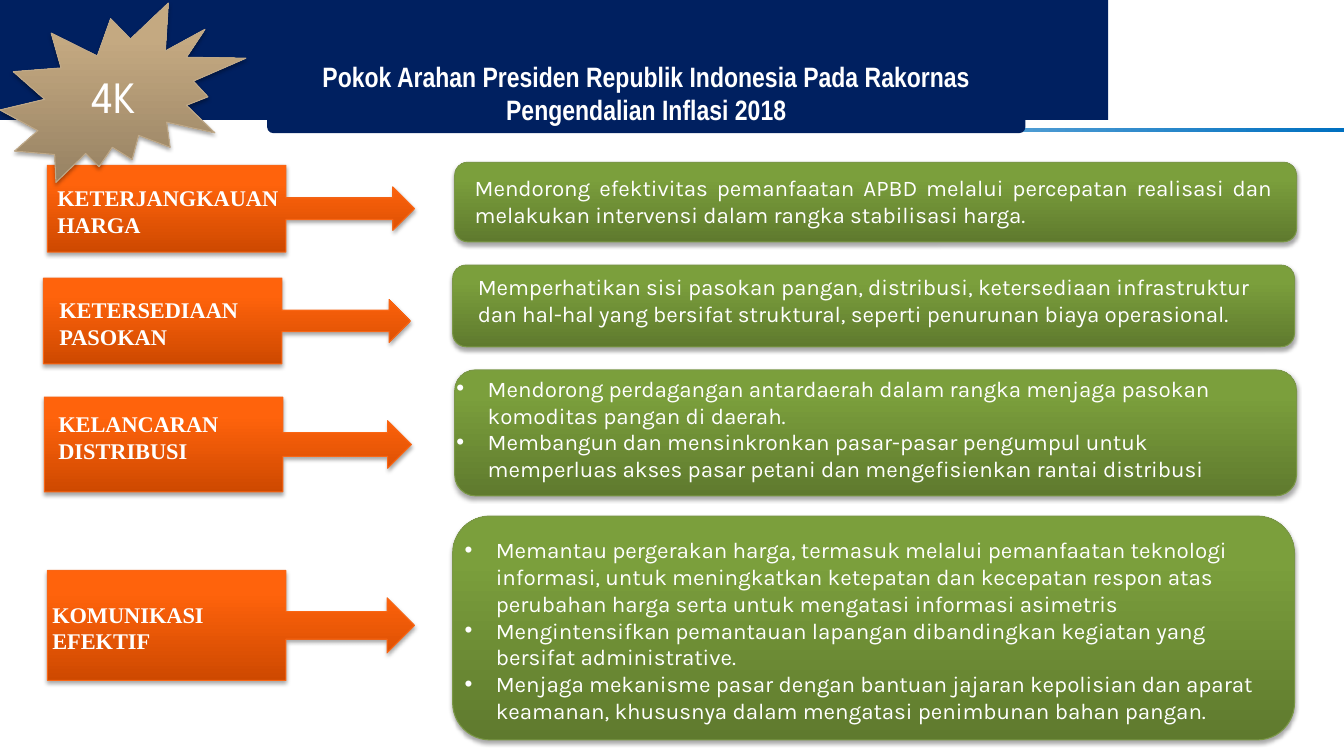
from dataclasses import dataclass

from lxml import etree
from pptx import Presentation
from pptx import util as u
from pptx.dml.color import RGBColor
from pptx.enum import shapes, text
from pptx.oxml.ns import qn

W, H = u.Inches(13.33), u.Inches(7.5)
COL, ROW = W / 100, H / 100
SHAPE, ALIGN, ANCHOR = shapes.MSO_SHAPE, text.PP_ALIGN, text.MSO_ANCHOR


@dataclass(frozen=True)
class Theme:
    navy: str = "002060"
    white: str = "FFFFFF"
    rule: tuple = ((0, "0070C0"), (78, "FFFFFF"), (100, "FFFFFF"), (100, "797B7E"))
    orange: tuple = ((0, "CE4900"), (80, "FF630C"), (100, "FF640E"))
    orange_line: str = "F96615"
    green: tuple = ((0, "5F7A2E"), (80, "7B9F3C"), (100, "7CA13B"))
    green_line: str = "7A9746"
    tan: tuple = ((0, "978263"), (80, "C4A981"), (100, "C6AA80"))
    tan_line: str = "BFA989"
    title: tuple = ("Arial Narrow", 20, True)
    label: tuple = ("Times New Roman", 16, True)
    body: tuple = ("Karla", 16, False)
    badge: tuple = ("League Spartan", 32, False)


T = Theme()


def put(obj, **values):
    for name, value in values.items():
        setattr(obj, name, value)


def sub(parent, tag, **attrs):
    return etree.SubElement(parent, qn(tag), {k: str(v) for k, v in attrs.items()})


def emu(box):
    x, y, w, h = box
    return [round(v) for v in (x * COL, y * ROW, w * COL, h * ROW)]


def inside(box, dx, dy, w, h):
    return box[0] + dx, box[1] + dy, w, h


def add_block(s, kind, box, fill, line=None, angle=90):
    sp = s.shapes.add_shape(kind, *emu(box))
    sp.shadow.inherit = False
    if isinstance(fill, str):
        sp.fill.solid()
        sp.fill.fore_color.rgb = RGBColor.from_string(fill)
    else:
        sp.fill.gradient()
        sp.fill.gradient_angle = angle
        stops = sp._element.spPr.find(".//" + qn("a:gsLst"))
        stops[:] = []
        for pos, color in fill:
            sub(sub(stops, "a:gs", pos=pos * 1000), "a:srgbClr", val=color)
    if line is None:
        sp.line.fill.background()
        return sp
    sp.line.color.rgb = RGBColor.from_string(line)
    sp.line.width = u.Pt(0.75)
    effects = sp._element.spPr.find(qn("a:effectLst"))
    shadow = sub(effects, "a:outerShdw", blurRad=u.Pt(3.1), dist=u.Pt(1.8),
                 dir=5400000, rotWithShape=0)
    sub(sub(shadow, "a:srgbClr", val="000000"), "a:alpha", val=35000)
    return sp


def write(sp, paras, style, align=ALIGN.LEFT, anchor=ANCHOR.TOP, bullets=False):
    tf = sp.text_frame
    put(tf, word_wrap=True, vertical_anchor=anchor)
    name, size, bold = style
    for i, line in enumerate(paras):
        p = tf.paragraphs[0] if i == 0 else tf.add_paragraph()
        p.alignment = align
        if bullets:
            pPr = p._p.get_or_add_pPr()
            pPr.set("marL", str(u.Inches(0.31)))
            pPr.set("indent", str(u.Inches(-0.31)))
            sub(pPr, "a:buFont", typeface="Arial")
            sub(pPr, "a:buChar", char="•")
        r = p.add_run()
        r.text = line
        put(r.font, name=name, size=u.Pt(size), bold=bold)
        r.font.color.rgb = RGBColor.from_string(T.white)


def add_text(s, box, paras, style, **layout):
    write(s.shapes.add_textbox(*emu(box)), paras, style, **layout)


def header(s, box, title):
    add_block(s, SHAPE.FLOWCHART_PROCESS, inside(box, 0, 16.93, box[2], 0.53),
              T.rule, angle=180)
    add_block(s, SHAPE.RECTANGLE, inside(box, 0, 0, 82.45, 15.87), T.navy)
    sp = add_block(s, SHAPE.ROUNDED_RECTANGLE,
                   inside(box, 19.88, 6.93, 56.41, 10.67), T.navy)
    sp.adjustments[0] = 0.072
    write(sp, [title], T.title, align=ALIGN.CENTER, anchor=ANCHOR.MIDDLE)


def callout(s, box, paras, dx, dy):
    add_block(s, SHAPE.RIGHT_ARROW_CALLOUT, box, T.orange, T.orange_line)
    add_text(s, inside(box, dx, dy, 20.4, 8.53), paras, T.label)


def card(s, box, paras, area, **layout):
    add_block(s, SHAPE.ROUNDED_RECTANGLE, box, T.green, T.green_line)
    add_text(s, inside(box, *area), paras, T.body, **layout)


def badge(s, box, label):
    sp = add_block(s, SHAPE.EXPLOSION2, box, T.tan, T.tan_line)
    write(sp, [label], T.badge, align=ALIGN.CENTER, anchor=ANCHOR.MIDDLE)


CALLOUT_W, CARD_W = 27.31, 62.64
CALLOUTS = [
    (3.53, 21.87, 11.47, ["KETERJANGKAUAN", "HARGA"], 0, 1.87),
    (3.23, 36.8, 11.33, ["KETERSEDIAAN PASOKAN"], 0.45, 1.73),
    (3.3, 52.53, 12.53, ["KELANCARAN", "DISTRIBUSI"], 0.3, 1.07),
    (3.53, 75.47, 14.53, ["KOMUNIKASI", "EFEKTIF"], -0.38, 3.33),
]
CARDS = [
    (33.83, 21.47, 10.53, (0.75, 0.93, 60.84, 8.53), {"align": ALIGN.JUSTIFY}, [
        "Mendorong efektivitas pemanfaatan APBD melalui percepatan realisasi dan "
        "melakukan intervensi dalam rangka stabilisasi harga."]),
    (33.68, 35.07, 10.8, (1.13, 0.4, 60.84, 8.53), {}, [
        "Memperhatikan sisi pasokan pangan, distribusi, ketersediaan infrastruktur "
        "dan hal-hal yang bersifat struktural, seperti penurunan biaya operasional."]),
    (33.83, 48.93, 16.67, (-0.6, 0, 62.72, 15.73), {"bullets": True}, [
        "Mendorong perdagangan antardaerah dalam rangka menjaga pasokan "
        "komoditas pangan di daerah.",
        "Membangun dan mensinkronkan pasar-pasar pengumpul untuk "
        "memperluas akses pasar petani dan mengefisienkan rantai distribusi"]),
    (33.68, 68.27, 29.6, (0.15, 2, 61.59, 26.53), {"bullets": True}, [
        "Memantau pergerakan harga, termasuk melalui pemanfaatan teknologi "
        "informasi, untuk meningkatkan ketepatan dan kecepatan respon atas "
        "perubahan harga serta untuk mengatasi informasi asimetris",
        "Mengintensifkan pemantauan lapangan dibandingkan kegiatan yang "
        "bersifat administrative.",
        "Menjaga mekanisme pasar dengan bantuan jajaran kepolisian dan aparat "
        "keamanan, khususnya dalam mengatasi penimbunan bahan pangan."]),
]


def main():
    prs = Presentation()
    put(prs, slide_width=W, slide_height=H)
    s = prs.slides.add_slide(prs.slide_layouts[6])
    header(s, (0, 0, 100, 17.6),
           "Pokok Arahan Presiden Republik Indonesia Pada Rakornas "
           "Pengendalian Inflasi 2018")
    for x, y, h, paras, dx, dy in CALLOUTS:
        callout(s, (x, y, CALLOUT_W, h), paras, dx, dy)
    for x, y, h, area, layout, paras in CARDS:
        card(s, (x, y, CARD_W, h), paras, area, **layout)
    badge(s, (0, 0.4, 18.3, 23.73), "4K")
    prs.save("out.pptx")


if __name__ == "__main__":
    main()
